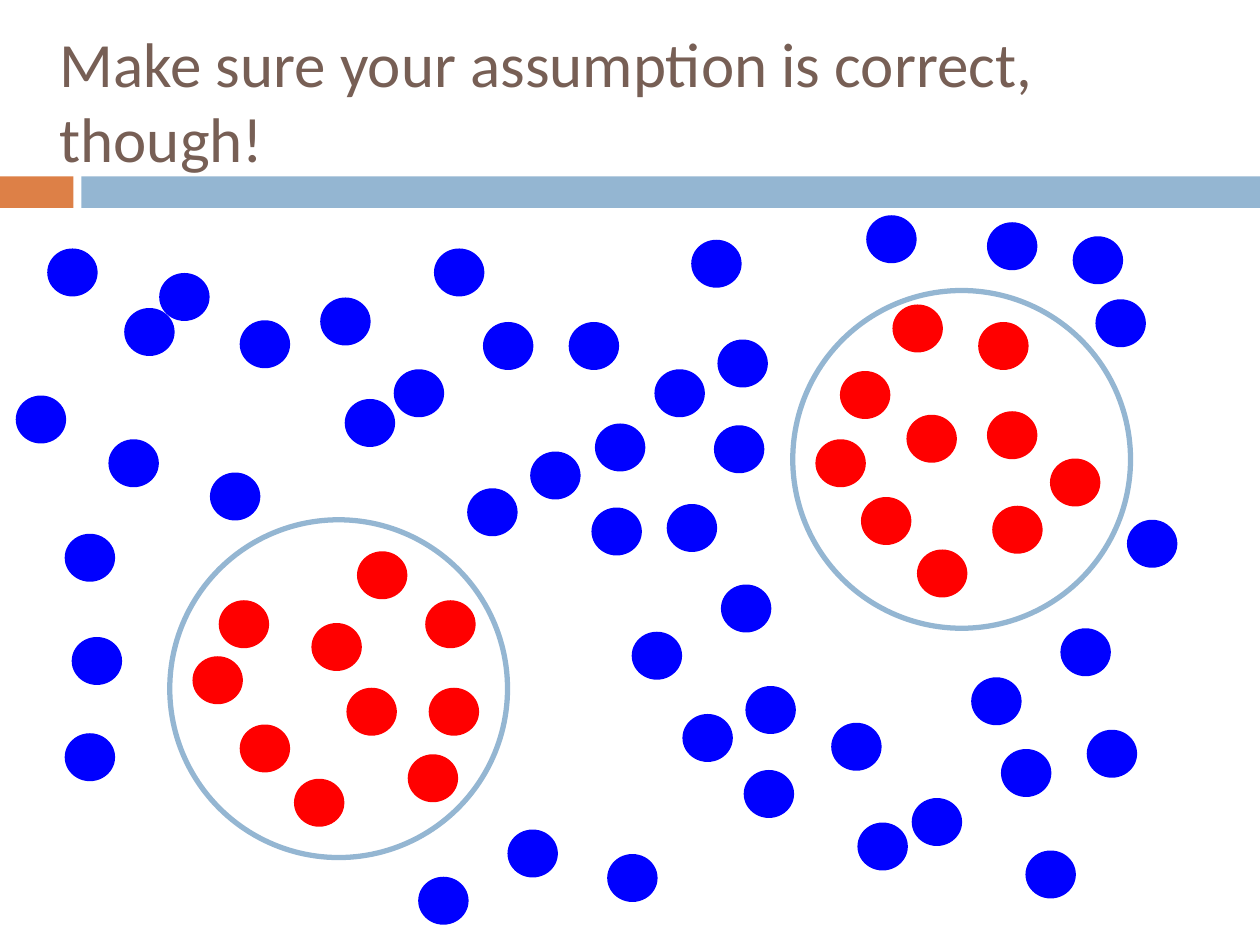
"""Build a slide of two red clusters circled among scattered blue points."""
from dataclasses import dataclass

from pptx import Presentation
from pptx import util as u
from pptx.dml import color
from pptx.enum import shapes, text


@dataclass(frozen=True)
class Theme:
    accent: str = "DD8047"
    band: str = "94B6D2"
    heading: str = "775F55"
    cluster: str = "FF0000"
    background: str = "0000FF"
    font: str = "Calibri"
    title_size: float = 36
    ring_width: float = 3
    dot_size: tuple = (28.8, 27.4)
    ring_size: tuple = (193, 193)


class SlideBuilder:
    def __init__(self, slide, theme):
        self.slide = slide
        self.theme = theme

    def shape(self, kind, at, size, fill=None, line=None):
        box = [u.Pt(length) for length in (*at, *size)]
        figure = self.slide.shapes.add_shape(kind, *box)
        figure.shadow.inherit = False
        if fill:
            figure.fill.solid()
            figure.fill.fore_color.rgb = color.RGBColor.from_string(fill)
        else:
            figure.fill.background()
        if line:
            figure.line.color.rgb = color.RGBColor.from_string(line)
            figure.line.width = u.Pt(self.theme.ring_width)
        else:
            figure.line.fill.background()

    def bar(self, at, size, fill):
        self.shape(shapes.MSO_SHAPE.RECTANGLE, at, size, fill=fill)

    def dots(self, places, fill):
        for place in places:
            self.shape(shapes.MSO_SHAPE.OVAL, place, self.theme.dot_size, fill=fill)

    def ring(self, at):
        self.shape(shapes.MSO_SHAPE.OVAL, at, self.theme.ring_size, line=self.theme.band)

    def title(self, wording, at, size):
        box = [u.Pt(length) for length in (*at, *size)]
        frame = self.slide.shapes.add_textbox(*box).text_frame
        frame.word_wrap = True
        frame.vertical_anchor = text.MSO_ANCHOR.MIDDLE
        frame.margin_right = u.Pt(14.4)
        run = frame.paragraphs[0].add_run()
        run.text = wording
        run.font.name = self.theme.font
        run.font.size = u.Pt(self.theme.title_size)
        run.font.color.rgb = color.RGBColor.from_string(self.theme.heading)


LEFT_CLUSTER = [
    (125, 343), (137, 414), (178, 356), (198, 393), (204, 315),
    (245, 393), (168, 445), (243, 343), (233, 431), (110, 375),
]
RIGHT_CLUSTER = [
    (480, 212), (492, 284), (518, 237), (564, 235), (559, 184),
    (600, 262), (524, 314), (567, 289), (510, 174), (466, 251),
]
SCATTERED = [
    (239, 501), (290, 474), (555, 387), (606, 359), (621, 417), (425, 440),
    (475, 413), (490, 470), (361, 361), (412, 334), (426, 392), (347, 488),
    (390, 408), (37, 419), (41, 364), (37, 305), (521, 456), (572, 428),
    (586, 486), (338, 290), (325, 184), (340, 242), (303, 258), (408, 243),
    (395, 137), (410, 194), (374, 211), (381, 288), (267, 279), (120, 270),
    (71, 176), (62, 251), (9, 226), (27, 142), (495, 123), (613, 135),
    (564, 127), (644, 297), (626, 171), (248, 142), (225, 211), (276, 184),
    (183, 170), (197, 228), (137, 183), (91, 156),
]


def main():
    deck = Presentation()
    deck.slide_width, deck.slide_height = u.Pt(720), u.Pt(540)
    theme = Theme()
    builder = SlideBuilder(deck.slides.add_slide(deck.slide_layouts[6]), theme)

    builder.bar((0, 100.8), (42, 18), theme.accent)
    builder.bar((46.5, 100.8), (673.5, 18), theme.band)
    builder.title("Make sure your assumption is correct, though!", (27, 18), (693, 78))
    for cluster, ring_corner in ((LEFT_CLUSTER, (97, 297)), (RIGHT_CLUSTER, (453, 166))):
        builder.dots(cluster, theme.cluster)
        builder.ring(ring_corner)
    builder.dots(SCATTERED, theme.background)

    deck.save("out.pptx")


if __name__ == "__main__":
    main()
